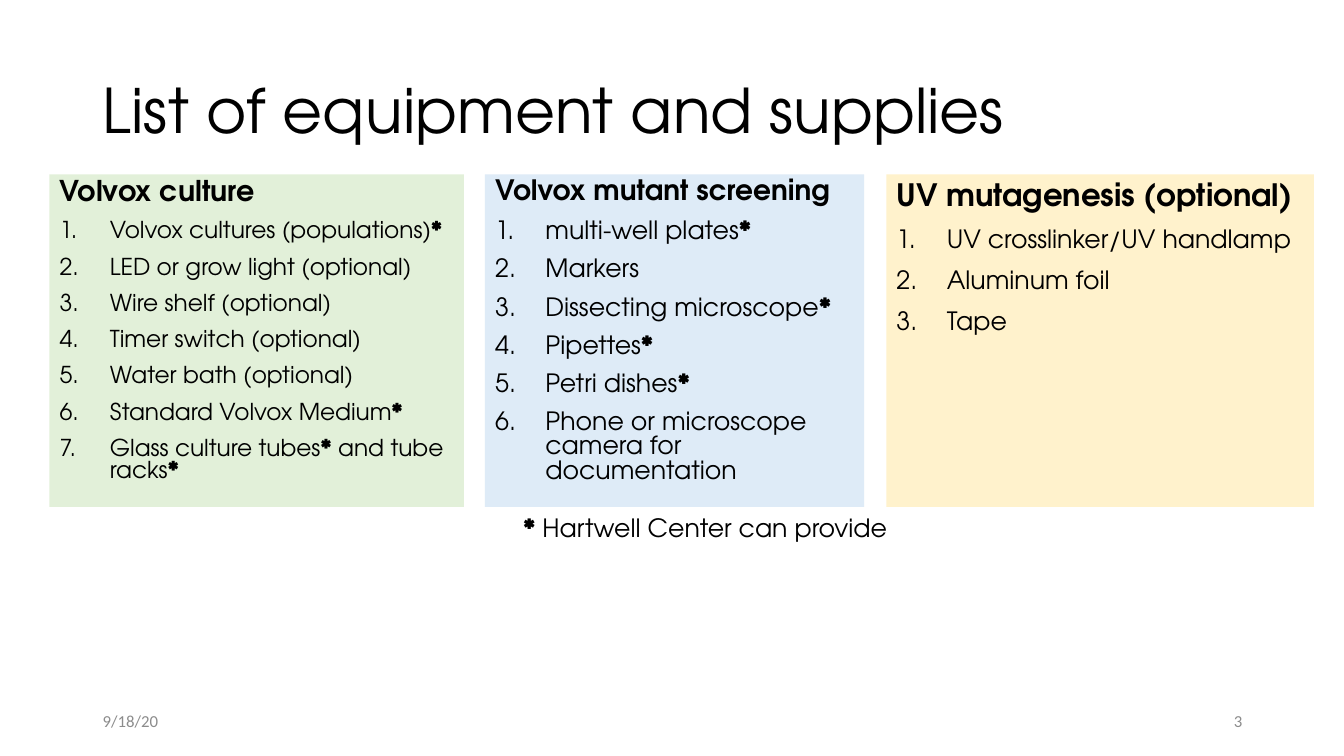
from dataclasses import dataclass

from lxml import etree
from pptx import Presentation
from pptx.dml.color import RGBColor
from pptx.enum.text import MSO_ANCHOR, MSO_AUTO_SIZE, PP_ALIGN
from pptx.oxml.ns import qn
from pptx.util import Inches, Pt


@dataclass(frozen=True)
class Theme:
    font: str = "TeX Gyre Adventor"
    small: str = "Calibri"
    ink: str = "000000"
    gray: str = "8C8C8C"
    green: str = "E2F0D9"
    blue: str = "DEEBF7"
    gold: str = "FFF2CC"
    title: float = 44
    note: float = 18
    foot: float = 12
    gap: float = 10
    indent: float = 0.5


class Deck:
    def __init__(self, theme):
        self.theme = theme
        self.prs = Presentation()
        self.prs.slide_width = Inches(13.33)
        self.prs.slide_height = Inches(7.5)
        self.slide = self.prs.slides.add_slide(self.prs.slide_layouts[4])

    def place(self, shape, box):
        shape.left, shape.top, shape.width, shape.height = map(Inches, box)

    def run(self, para, text, size, bold=False, font=None, color=None):
        run = para.add_run()
        run.text = text
        run.font.size = Pt(size)
        run.font.bold = bold
        run.font.name = font or self.theme.font
        run.font.color.rgb = RGBColor.from_string(color or self.theme.ink)

    def starred(self, para, text, size):
        """Add text with each asterisk as a bold run."""
        for i, part in enumerate(text.split("*")):
            if i:
                self.run(para, "*", size, True)
            if part:
                self.run(para, part, size)

    def title(self, text, box):
        shape = self.slide.shapes.title
        self.place(shape, box)
        frame = shape.text_frame
        frame.auto_size = MSO_AUTO_SIZE.NONE
        frame.vertical_anchor = MSO_ANCHOR.MIDDLE
        para = frame.paragraphs[0]
        para.alignment = PP_ALIGN.LEFT
        para.line_spacing = 0.9
        self.run(para, text, self.theme.title)

    def bullet(self, para, number):
        props = para._p.get_or_add_pPr()
        indent = Inches(self.theme.indent) if number else 0
        props.set("marL", str(indent))
        props.set("indent", str(-indent))
        if number:
            font = etree.SubElement(props, qn("a:buFont"))
            font.set("typeface", self.theme.font)
            mark = etree.SubElement(props, qn("a:buAutoNum"))
            mark.set("type", "arabicPeriod")
        else:
            etree.SubElement(props, qn("a:buNone"))

    def panel(self, idx, box, fill, head, items, sizes, pitch):
        """Fill a body placeholder with a heading and a numbered list."""
        shape = self.slide.placeholders[idx]
        self.place(shape, box)
        shape.fill.solid()
        shape.fill.fore_color.rgb = RGBColor.from_string(fill)
        frame = shape.text_frame
        frame.auto_size = MSO_AUTO_SIZE.NONE
        frame.vertical_anchor = MSO_ANCHOR.TOP
        for i, text in enumerate([head, *items]):
            para = frame.add_paragraph() if i else frame.paragraphs[0]
            para.line_spacing = pitch
            para.space_before = Pt(self.theme.gap)
            self.bullet(para, i > 0)
            if i:
                self.starred(para, text, sizes[1])
            else:
                self.run(para, text, sizes[0], True)

    def label(self, box, wrap=True):
        """Add an empty text box and return its first paragraph."""
        frame = self.slide.shapes.add_textbox(*map(Inches, box)).text_frame
        frame.word_wrap = wrap
        if not wrap:
            frame.auto_size = MSO_AUTO_SIZE.SHAPE_TO_FIT_TEXT
        return frame.paragraphs[0]

    def note(self, text, box):
        self.starred(self.label(box, False), text, self.theme.note)

    def foot(self, text, left, align):
        para = self.label((left, 6.95, 3, 0.4))
        para.alignment = align
        para._p.getparent().bodyPr.set("anchor", "ctr")
        self.run(para, text, self.theme.foot,
                 font=self.theme.small, color=self.theme.gray)

    def prune(self):
        """Remove placeholders left empty."""
        for shape in list(self.slide.placeholders):
            if not shape.text_frame.text:
                shape.element.getparent().remove(shape.element)


def main():
    theme = Theme()
    deck = Deck(theme)
    deck.title("List of equipment and supplies", (0.92, 0.4, 11.5, 1.45))
    panels = [
        (0.49, 4.11, theme.green, "Volvox culture", [
            "Volvox cultures (populations)*",
            "LED or grow light (optional)",
            "Wire shelf (optional)",
            "Timer switch (optional)",
            "Water bath (optional)",
            "Standard Volvox Medium*",
            "Glass culture tubes* and tube racks*",
        ], (20.4, 16.6), 0.8),
        (4.81, 3.76, theme.blue, "Volvox mutant screening", [
            "multi-well plates*",
            "Markers",
            "Dissecting microscope*",
            "Pipettes*",
            "Petri dishes*",
            "Phone or microscope camera for documentation",
        ], (20, 18), 0.8),
        (8.79, 4.24, theme.gold, "UV mutagenesis (optional)", [
            "UV crosslinker/UV handlamp",
            "Aluminum foil",
            "Tape",
        ], (22, 18), 0.9),
    ]
    for idx, (left, width, *rest) in enumerate(panels, 1):
        deck.panel(idx, (left, 1.73, width, 3.3), *rest)
    deck.note("* Hartwell Center can provide", (5.09, 5.03, 3.94, 0.4))
    deck.foot("9/18/20", 0.92, PP_ALIGN.LEFT)
    deck.foot("3", 9.42, PP_ALIGN.RIGHT)
    deck.prune()
    deck.prs.save("out.pptx")


if __name__ == "__main__":
    main()
